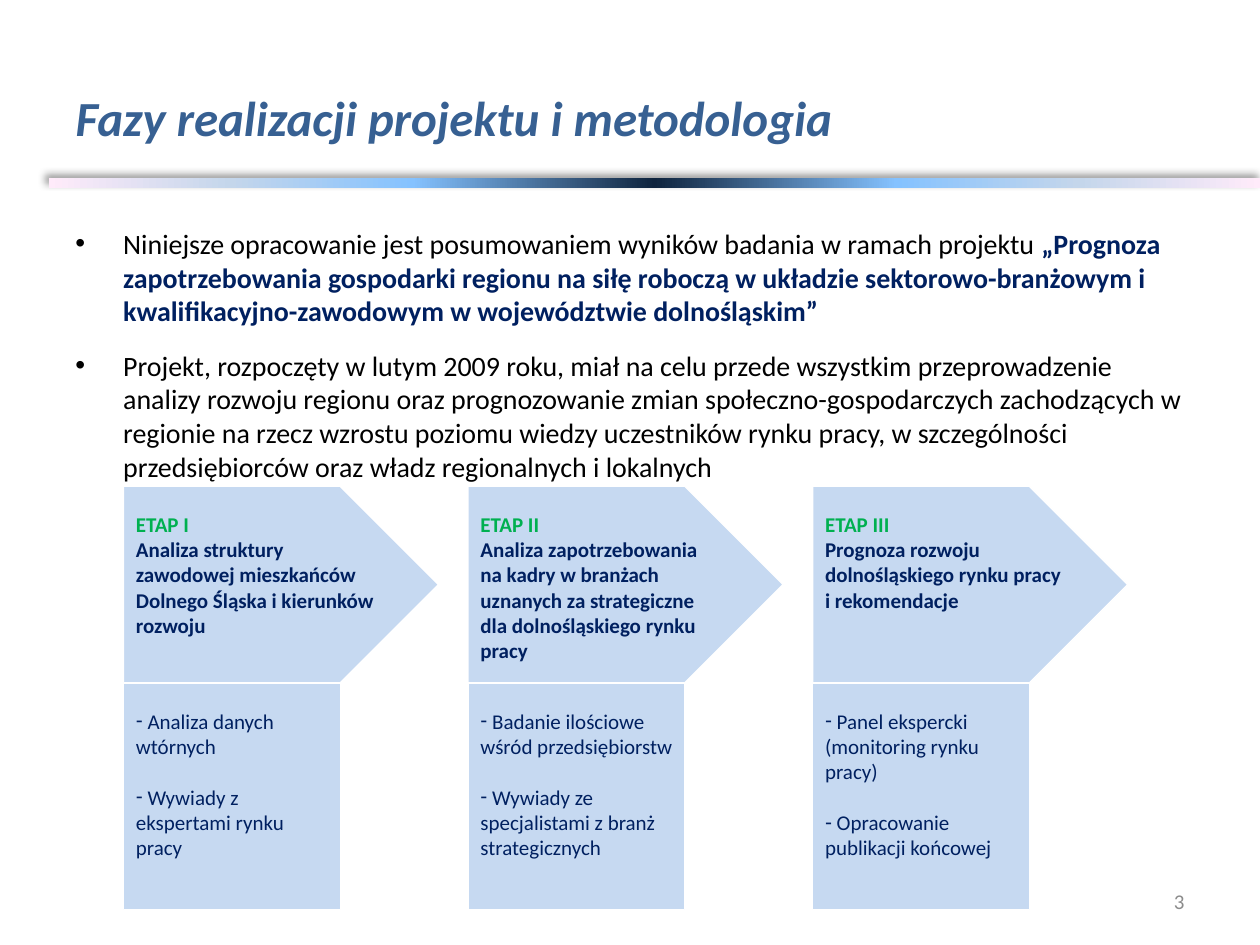
from dataclasses import dataclass

from lxml import etree
from pptx import Presentation
from pptx import util as u
from pptx.dml import color
from pptx.enum import shapes, text
from pptx.oxml import ns


@dataclass(frozen=True)
class Theme:
    """Colours, font and type sizes of the deck."""
    font: str = "Calibri"
    title: str = "376092"
    ink: str = "000000"
    navy: str = "002060"
    green: str = "00B050"
    grey: str = "8C8C8C"
    panel: str = "C6D9F1"
    white: str = "FFFFFF"
    bar: tuple = ((0, "FFEBFA"), (15, "C4D6EB"), (30, "85C2FF"), (50, "0F243E"),
                  (70, "85C2FF"), (85, "C4D6EB"), (100, "FFEBFA"))
    head: int = 28
    body: int = 16
    small: int = 12


def apply(obj, values):
    """Set each attribute named in the dict."""
    for name, value in values.items():
        setattr(obj, name, value)


def child(parent, tag, **attrs):
    """Append a DrawingML element and return it."""
    return etree.SubElement(parent, ns.qn("a:" + tag),
                            {key: str(value) for key, value in attrs.items()})


class Deck:
    """Holds the theme and the current slide."""

    def __init__(self, theme):
        """Open a deck with one title-only slide."""
        self.theme = theme
        self.prs = Presentation()
        apply(self.prs, {"slide_width": u.Inches(10), "slide_height": u.Inches(7.5)})
        self.slide = self.prs.slides.add_slide(self.prs.slide_layouts[5])

    def run(self, para, words, size, tint, **style):
        """Add a styled run to a paragraph."""
        run = para.add_run()
        run.text = words
        apply(run.font, {"name": self.theme.font, "size": u.Pt(size), **style})
        run.font.color.rgb = color.RGBColor.from_string(tint)

    def para(self, frame, runs, mark=None, hang=0, **style):
        """Add a paragraph of runs, with an optional bullet."""
        first = frame.paragraphs[0]
        para = frame.add_paragraph() if first.runs else first
        apply(para, {"alignment": text.PP_ALIGN.LEFT, **style})
        for words, size, tint, extra in runs:
            self.run(para, words, size, tint, **extra)
        if mark:
            props = para._p.get_or_add_pPr()
            apply_hang = {"marL": u.Inches(hang), "indent": -u.Inches(hang)}
            for name, value in apply_hang.items():
                props.set(name, str(value))
            child(props, "buFont", typeface="Arial")
            child(props, "buChar", char=mark)

    def title(self, words, box):
        """Place and format the title placeholder."""
        shape = self.slide.shapes.title
        apply(shape, dict(zip(("left", "top", "width", "height"), map(u.Inches, box))))
        apply(shape.text_frame, {"vertical_anchor": text.MSO_ANCHOR.MIDDLE, "word_wrap": True})
        self.para(shape.text_frame,
                  [(words, self.theme.head, self.theme.title, {"bold": True, "italic": True})])

    def text(self, box, anchor=text.MSO_ANCHOR.TOP):
        """Add a wrapping text box and return its frame."""
        frame = self.slide.shapes.add_textbox(*map(u.Inches, box)).text_frame
        apply(frame, {"word_wrap": True, "vertical_anchor": anchor})
        return frame

    def rule(self, box):
        """Add the shaded bar under the title."""
        bar = self.slide.shapes.add_shape(shapes.MSO_SHAPE.RECTANGLE, *map(u.Inches, box))
        bar.line.fill.background()
        bar.shadow.inherit = False
        bar.fill.gradient()
        bar.fill.gradient_angle = 0
        props = bar.element.spPr
        stops = props.find(".//" + ns.qn("a:gsLst"))
        for old in list(stops):
            stops.remove(old)
        for place, tint in self.theme.bar:
            child(child(stops, "gs", pos=place * 1000), "srgbClr", val=tint)
        glow = child(props.find(ns.qn("a:effectLst")), "outerShdw", blurRad=u.Pt(4),
                     dist=u.Pt(3), dir=225 * 60000, algn="br", rotWithShape=0)
        child(child(glow, "srgbClr", val=self.theme.ink), "alpha", val=40000)

    def panel(self, group, kind, box):
        """Add a filled shape to a group and return its frame."""
        shape = group.shapes.add_shape(kind, *map(u.Inches, box))
        shape.shadow.inherit = False
        shape.fill.solid()
        shape.fill.fore_color.rgb = color.RGBColor.from_string(self.theme.panel)
        shape.line.color.rgb = color.RGBColor.from_string(self.theme.white)
        shape.line.width = u.Pt(0.75)
        apply(shape.text_frame, {"word_wrap": True, "margin_top": u.Inches(0.2),
                                 "vertical_anchor": text.MSO_ANCHOR.TOP})
        return shape.text_frame

    def stage(self, left, name, goal, tasks):
        """Add one stage: an arrow with its tasks below."""
        look = self.theme
        group = self.slide.shapes.add_group_shape()
        arrow = self.panel(group, shapes.MSO_SHAPE.PENTAGON, (left, 3.86, 2.5, 1.56))
        for words, tint in ((name, look.green), (goal, look.navy)):
            self.para(arrow, [(words, look.small, tint, {"bold": True})])
        frame = self.panel(group, shapes.MSO_SHAPE.RECTANGLE, (left, 5.42, 1.72, 1.8))
        for index, task in enumerate(tasks):
            self.para(frame, [(" " + task, look.small, look.navy, {})], mark="-",
                      space_before=u.Pt(14.6 * index))


STAGES = (
    ("ETAP I", "Analiza struktury zawodowej mieszkańców Dolnego Śląska i kierunków rozwoju",
     ("Analiza danych wtórnych", "Wywiady z ekspertami rynku pracy")),
    ("ETAP II", "Analiza zapotrzebowania na kadry w branżach uznanych za strategiczne "
     "dla dolnośląskiego rynku pracy",
     ("Badanie ilościowe wśród przedsiębiorstw",
      "Wywiady ze specjalistami z branż strategicznych")),
    ("ETAP III", "Prognoza rozwoju dolnośląskiego rynku pracy i rekomendacje",
     ("Panel ekspercki (monitoring rynku pracy)", "Opracowanie publikacji końcowej")),
)


def main():
    """Build the slide and save it."""
    look = Theme()
    deck = Deck(look)
    deck.rule((0.39, 1.41, 9.61, 0.08))
    deck.title("Fazy realizacji projektu i metodologia", (0.5, 0.3, 9, 1.25))
    points = (
        [("Niniejsze opracowanie jest posumowaniem wyników badania w ramach projektu ",
          look.body, look.ink, {}),
         ("„Prognoza zapotrzebowania gospodarki regionu na siłę roboczą w układzie "
          "sektorowo-branżowym i kwalifikacyjno-zawodowym w województwie dolnośląskim”",
          look.body, look.navy, {"bold": True})],
        [("Projekt, rozpoczęty w lutym 2009 roku, miał na celu przede wszystkim "
          "przeprowadzenie analizy rozwoju regionu oraz prognozowanie zmian "
          "społeczno-gospodarczych zachodzących w regionie na rzecz wzrostu poziomu wiedzy "
          "uczestników rynku pracy, w szczególności przedsiębiorców oraz władz regionalnych "
          "i lokalnych", look.body, look.ink, {})],
    )
    body = deck.text((0.5, 1.75, 9, 2.1))
    for runs in points:
        deck.para(body, runs, mark="•", hang=0.38, space_before=u.Pt(6), space_after=u.Pt(6))
    page = deck.text((7.17, 6.95, 2.33, 0.4), text.MSO_ANCHOR.MIDDLE)
    deck.para(page, [("3", look.small, look.grey, {})], alignment=text.PP_ALIGN.RIGHT)
    for index, stage in enumerate(STAGES):
        deck.stage(0.98 + 2.735 * index, *stage)
    deck.prs.save("out.pptx")


if __name__ == "__main__":
    main()
